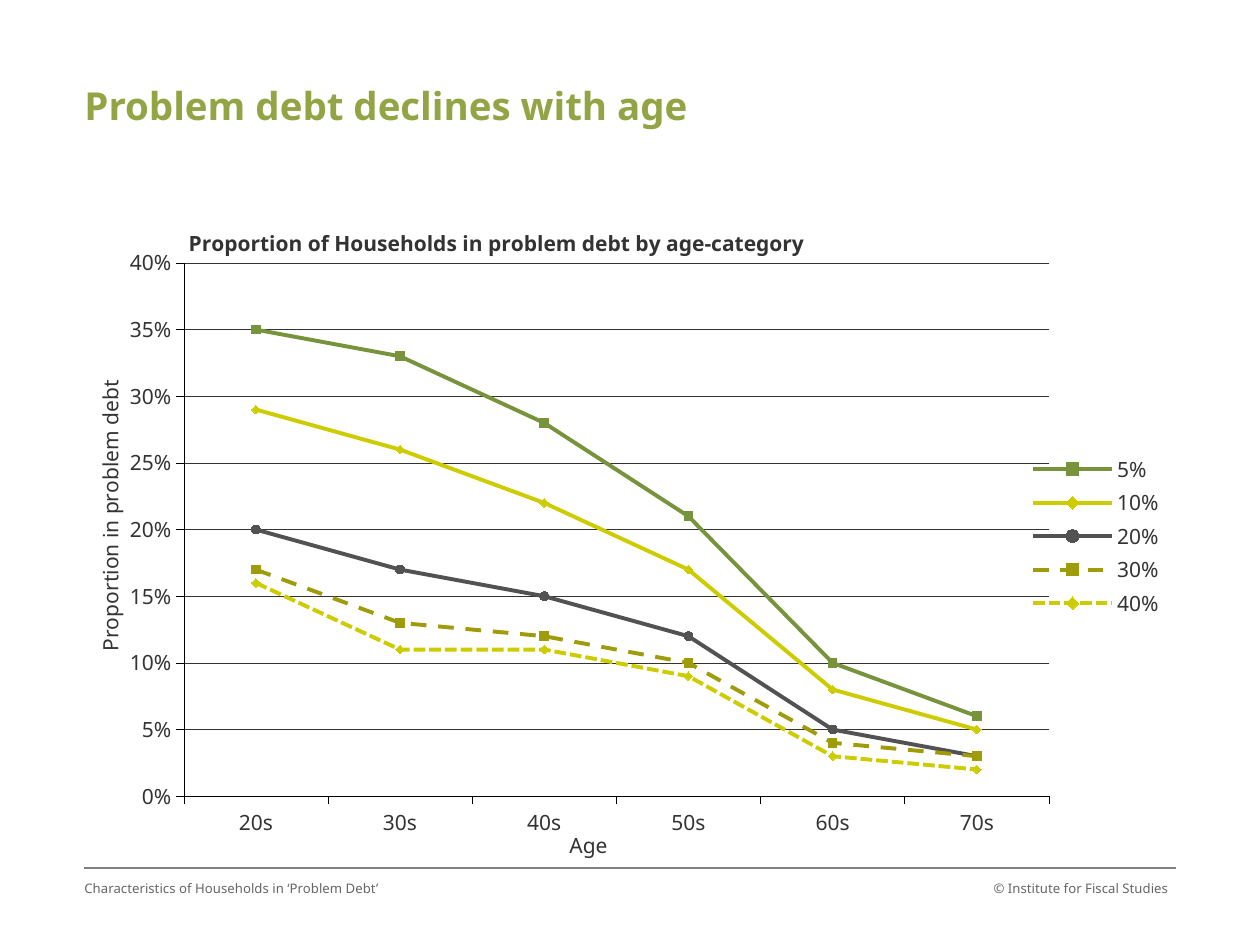
from lxml.etree import SubElement
from pptx import Presentation
from pptx.chart.data import CategoryChartData
from pptx.dml.color import RGBColor
from pptx.enum.chart import XL_CHART_TYPE as ChartType, XL_LEGEND_POSITION as LegendPosition
from pptx.enum.chart import XL_MARKER_STYLE as Marker, XL_TICK_MARK as TickMark
from pptx.enum.dml import MSO_LINE as Dash
from pptx.enum.shapes import MSO_CONNECTOR as Connector
from pptx.enum.text import MSO_ANCHOR as Anchor, PP_ALIGN as Align
from pptx.oxml import parse_xml
from pptx.oxml.ns import nsdecls, qn
from pptx.util import Inches, Pt

FONT = "Noto Sans"


def style(font, size, color, bold=False):
    font.name, font.size, font.bold = FONT, Pt(size), bold
    font.color.rgb = RGBColor.from_string(color)


def place(element, index, inner=False, **fractions):
    """Give a chart part a manual layout, in fractions of the chart's size."""
    for old in element.findall(qn("c:layout")):
        element.remove(old)
    layout = parse_xml(f"<c:layout {nsdecls('c')}><c:manualLayout/></c:layout>")
    settings = {"layoutTarget": "inner"} if inner else {}
    settings.update(xMode="edge", yMode="edge", **fractions)
    for name, value in settings.items():
        SubElement(layout[0], qn(f"c:{name}")).set("val", str(value))
    element.insert(index, layout)


deck = Presentation()
deck.slide_width, deck.slide_height = Inches(10), Inches(7.5)
page = deck.slides.add_slide(deck.slide_layouts[5])

# Title
title = page.shapes.title
title.left, title.top, title.width, title.height = map(Inches, (0.67, 0.65, 7.17, 0.44))
frame = title.text_frame
frame.text = "Problem debt declines with age"
frame.margin_left = frame.margin_right = frame.margin_top = frame.margin_bottom = 0
frame.vertical_anchor = Anchor.TOP
frame.paragraphs[0].alignment = Align.LEFT
style(frame.paragraphs[0].runs[0].font, 22, "93A445", bold=True)

# Footer
rule = page.shapes.add_connector(
    Connector.STRAIGHT, Inches(0.67), Inches(6.89), Inches(9.33), Inches(6.89))
rule.line.color.rgb = RGBColor.from_string("808080")
rule.line.width = Pt(0.75)
SubElement(rule._element.spPr, qn("a:effectLst"))

footers = [
    ("Characteristics of Households in ‘Problem Debt’", 0.67, 3.17, Align.LEFT),
    ("© Institute for Fiscal Studies", 7.6, 1.67, Align.RIGHT),
]
for text, left, width, alignment in footers:
    box = page.shapes.add_textbox(Inches(left), Inches(6.99), Inches(width), Inches(0.4))
    frame = box.text_frame
    frame.word_wrap = True
    frame.margin_left = frame.margin_right = frame.margin_top = frame.margin_bottom = 0
    frame.text = text
    frame.paragraphs[0].alignment = alignment
    style(frame.paragraphs[0].runs[0].font, 7.5, "666666")

# Chart
series_rows = [
    ("5%", (0.35, 0.33, 0.28, 0.21, 0.10, 0.06), "77933C", Dash.SOLID, Marker.SQUARE),
    ("10%", (0.29, 0.26, 0.22, 0.17, 0.08, 0.05), "CCCC00", Dash.SOLID, Marker.DIAMOND),
    ("20%", (0.20, 0.17, 0.15, 0.12, 0.05, 0.03), "525252", Dash.SOLID, Marker.CIRCLE),
    ("30%", (0.17, 0.13, 0.12, 0.10, 0.04, 0.03), "9F9C0B", Dash.DASH, Marker.SQUARE),
    ("40%", (0.16, 0.11, 0.11, 0.09, 0.03, 0.02), "CCCC00", Dash.SQUARE_DOT, Marker.DIAMOND),
]
data = CategoryChartData(number_format="0%")
data.categories = [f"{age}s" for age in range(20, 80, 10)]
for name, values, *_ in series_rows:
    data.add_series(name, values)
chart = page.shapes.add_chart(
    ChartType.LINE_MARKERS, Inches(0.67), Inches(1.62), Inches(8.66), Inches(5.26), data).chart
style(chart.font, 12, "333333")
chart.plots[0].vary_by_categories = False

for series, (_, _, color, dash, marker) in zip(chart.plots[0].series, series_rows):
    rgb = RGBColor.from_string(color)
    series.smooth = False
    series.format.line.color.rgb = rgb
    series.format.line.width = Pt(2.25)
    series.format.line.dash_style = dash
    series.marker.style, series.marker.size = marker, 5
    series.marker.format.fill.solid()
    series.marker.format.fill.fore_color.rgb = rgb
    series.marker.format.line.color.rgb = rgb

# Titles and axes
ages, shares = chart.category_axis, chart.value_axis
chart.has_title = True
titles = [
    (chart.chart_title, "Proportion of Households in problem debt by age-category", True, 0.092, 0.028),
    (ages.axis_title, "Age", False, 0.441, 0.939),
    (shares.axis_title, "Proportion in problem debt", False, 0.005, 0.261),
]
for heading, text, bold, x, y in titles:
    heading.text_frame.text = text
    style(heading.text_frame.paragraphs[0].runs[0].font, 12, "333333", bold)
    place(heading.element, 1, x=x, y=y)

for axis in (ages, shares):
    axis.major_tick_mark, axis.minor_tick_mark = TickMark.OUTSIDE, TickMark.NONE
    axis.format.line.color.rgb = RGBColor.from_string("000000")
    axis.format.line.width = Pt(0.25)
shares.minimum_scale, shares.maximum_scale, shares.major_unit = 0, 0.4, 0.05
shares.tick_labels.number_format = "0%"
shares.tick_labels.number_format_is_linked = False
grid = shares.major_gridlines.format.line
grid.color.rgb = RGBColor.from_string("333333")
grid.width, grid.dash_style = Pt(0.25), Dash.ROUND_DOT

# Legend and plot area
chart.has_legend = True
chart.legend.position = LegendPosition.RIGHT
chart.legend.include_in_layout = False
style(chart.legend.font, 12, "333333")
place(chart.element.xpath(".//c:legend")[0], 1, x=0.862, y=0.372, w=0.13, h=0.26)
place(chart.element.xpath(".//c:plotArea")[0], 0, inner=True, x=0.091, y=0.089, w=0.793, h=0.806)

deck.save("out.pptx")
